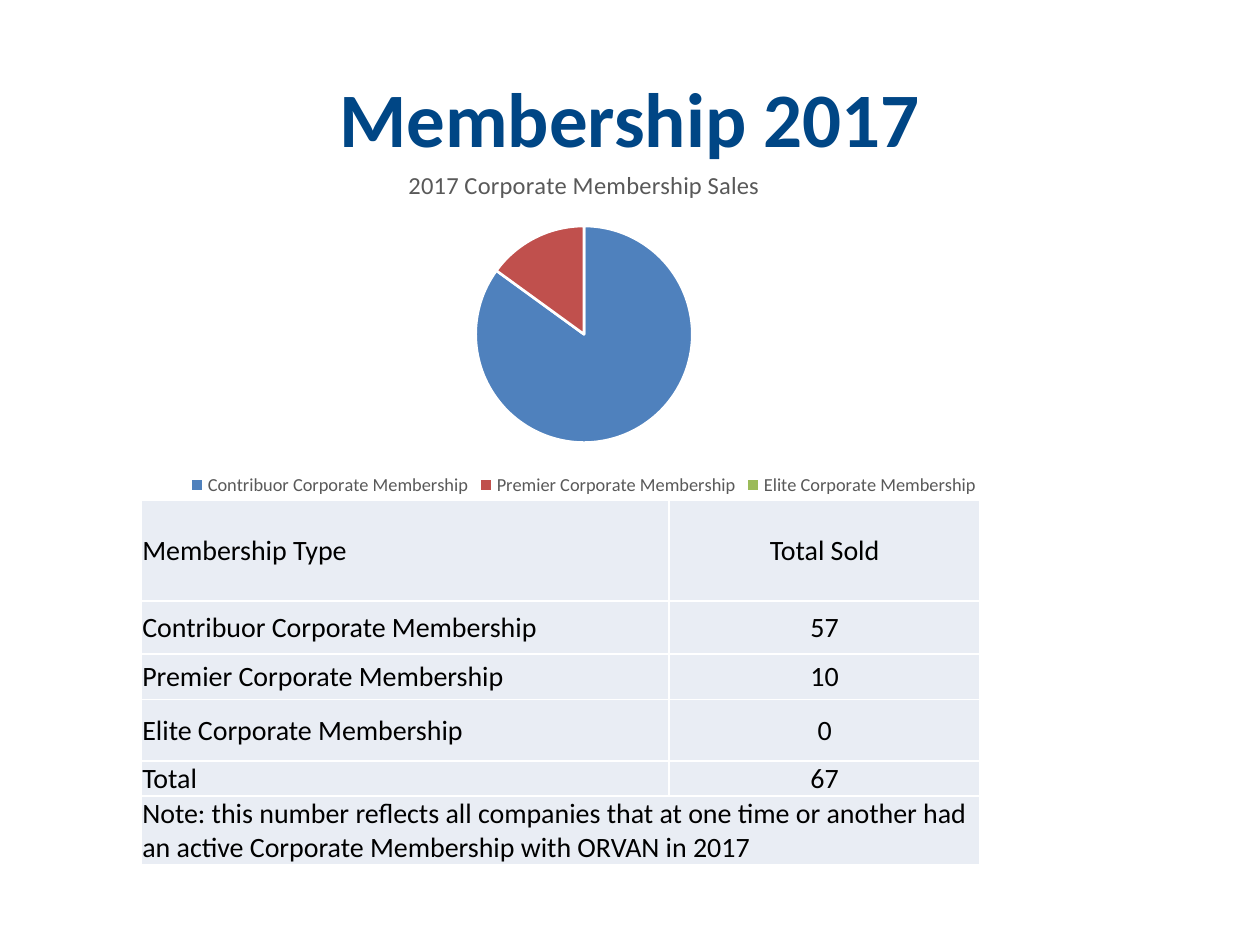
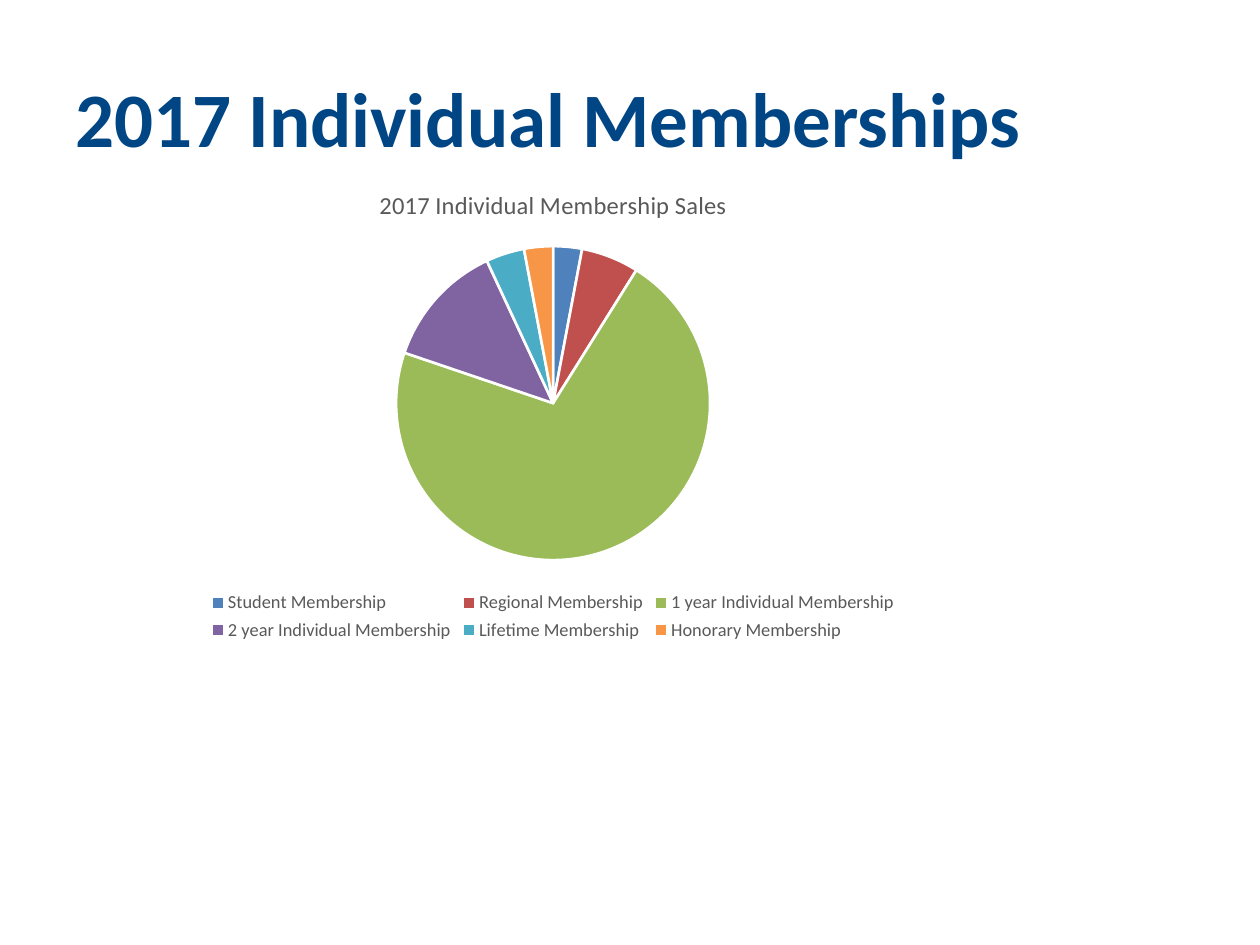
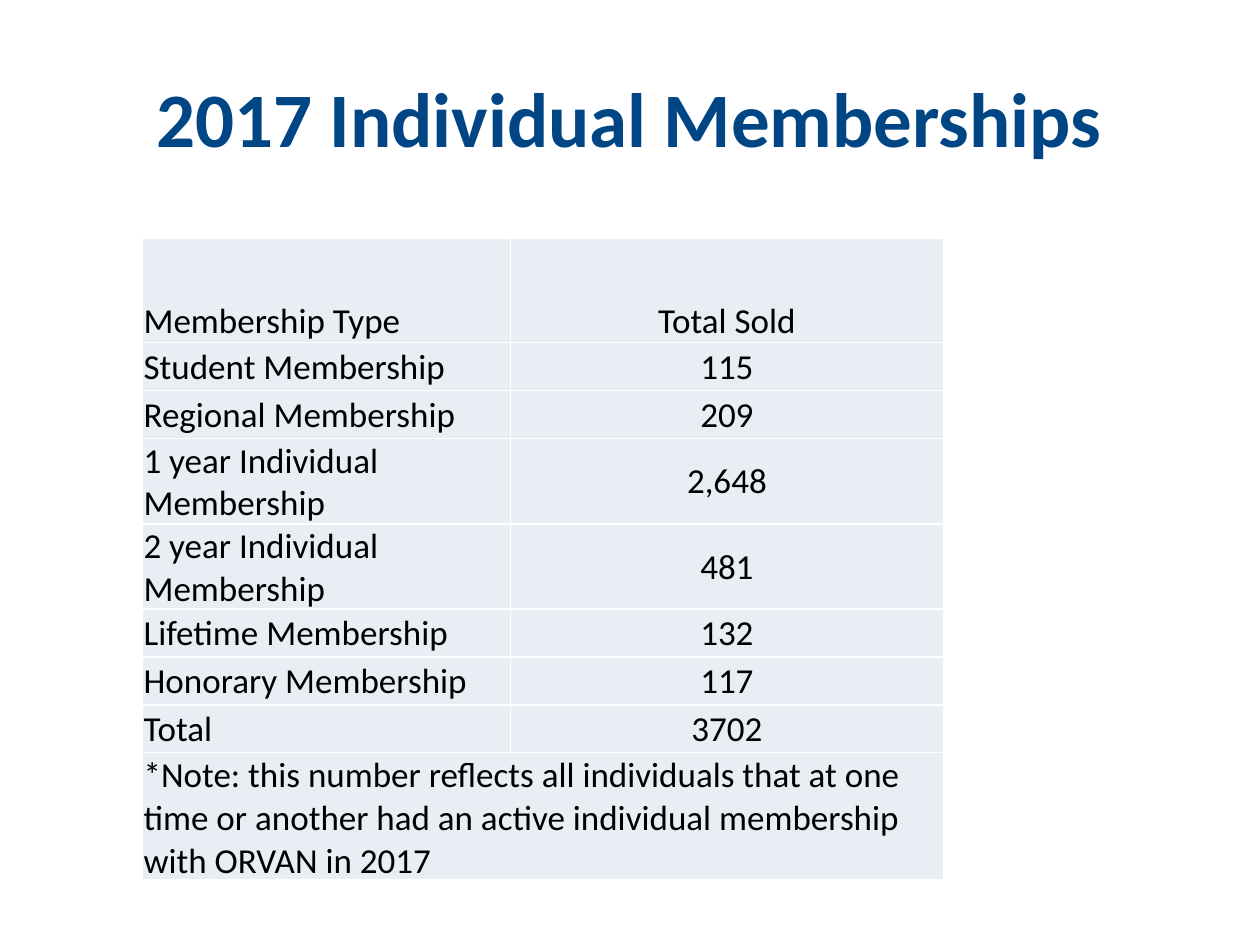
from lxml import etree
from pptx import Presentation
from pptx import util as u
from pptx.chart.data import CategoryChartData
from pptx.dml.color import RGBColor
from pptx.enum import chart as charts, text
from pptx.oxml.ns import qn

NAVY = RGBColor(0x00, 0x46, 0x85)
BLACK = RGBColor(0x00, 0x00, 0x00)
GRAY = RGBColor(0x59, 0x59, 0x59)
WHITE = RGBColor(0xFF, 0xFF, 0xFF)
PALE_BLUE = RGBColor(0xE9, 0xED, 0xF4)
SLICE_COLORS = [RGBColor.from_string(code) for code in
                ("4F81BD", "C0504D", "9BBB59", "8064A2", "4BACC6", "F79646")]
FONT = "Calibri"
WIDTH, HEIGHT = u.Inches(10), u.Inches(7.5)
LEFT, CENTER = text.PP_ALIGN.LEFT, text.PP_ALIGN.CENTER
MIDDLE, BOTTOM = text.MSO_ANCHOR.MIDDLE, text.MSO_ANCHOR.BOTTOM

CORPORATE_SOLD = {
    "Contribuor Corporate Membership": "57",
    "Premier Corporate Membership": "10",
    "Elite Corporate Membership": "0",
}
INDIVIDUAL_SOLD = {
    "Student Membership": "115",
    "Regional Membership": "209",
    "1 year Individual Membership": "2,648",
    "2 year Individual Membership": "481",
    "Lifetime Membership": "132",
    "Honorary Membership": "117",
}

# Boxes are left, top, width, height in inches on the 10 by 7.5 slide.
CORPORATE_PIE = dict(title="2017 Corporate Membership Sales", box=(1.12, 1.19, 7.03, 2.79),
                     names=CORPORATE_SOLD, shares=(85, 15, 0))
INDIVIDUAL_PIE = dict(title="2017 Individual Membership Sales", box=(0.61, 1.33, 7.56, 3.8),
                      names=INDIVIDUAL_SOLD, shares=(3, 6, 72, 13, 4, 3))
CORPORATE_TABLE = dict(
    sold=CORPORATE_SOLD, total="67", corner=(1.12, 3.97), columns=(4.19, 2.47),
    rows=(0.8, 0.42, 0.36, 0.49, 0.27, 0.52), size=16, header_anchor=MIDDLE,
    note="Note: this number reflects all companies that at one time or another had "
         "an active Corporate Membership with ORVAN in 2017")
INDIVIDUAL_TABLE = dict(
    sold=INDIVIDUAL_SOLD, total="3702", corner=(1.13, 1.89), columns=(2.92, 3.44),
    rows=(0.83,) + (0.38,) * 8, size=20, header_anchor=BOTTOM,
    note="*Note: this number reflects all individuals that at one time or another had "
         "an active individual membership with ORVAN in 2017")
SLIDES = [
    ("Membership 2017", CENTER, CORPORATE_PIE, CORPORATE_TABLE),
    ("2017 Individual Memberships", LEFT, INDIVIDUAL_PIE, None),
    ("2017 Individual Memberships", CENTER, None, INDIVIDUAL_TABLE),
]


def write(frame, words, size, color=BLACK, bold=False, align=LEFT):
    paragraph = frame.paragraphs[0]
    paragraph.alignment = align
    run = paragraph.add_run()
    run.text = words
    run.font.name, run.font.size = FONT, u.Pt(size)
    run.font.bold, run.font.color.rgb = bold, color


def fill_and_border(cell):
    """Give a table cell thin white borders and a pale fill."""
    properties = cell._tc.get_or_add_tcPr()
    for side in ("lnL", "lnR", "lnT", "lnB"):
        line = etree.SubElement(properties, qn(f"a:{side}"), w=str(u.Pt(1)))
        solid = etree.SubElement(line, qn("a:solidFill"))
        etree.SubElement(solid, qn("a:srgbClr"), val=str(WHITE))
    cell.fill.solid()
    cell.fill.fore_color.rgb = PALE_BLUE


presentation = Presentation()
presentation.slide_width, presentation.slide_height = WIDTH, HEIGHT

for title, title_align, pie, sales in SLIDES:
    slide = presentation.slides.add_slide(presentation.slide_layouts[6])
    title_box = slide.shapes.add_textbox(
        int(WIDTH * 0.05), int(HEIGHT * 0.04), int(WIDTH * 0.9), u.Inches(1.25))
    title_box.text_frame.word_wrap = True
    title_box.text_frame.vertical_anchor = MIDDLE
    write(title_box.text_frame, title, 44, color=NAVY, bold=True, align=title_align)

    if pie:
        data = CategoryChartData()
        data.categories = list(pie["names"])
        data.add_series("Series 1", pie["shares"])
        chart = slide.shapes.add_chart(
            charts.XL_CHART_TYPE.PIE, *map(u.Inches, pie["box"]), data).chart
        chart.font.name, chart.font.size = FONT, u.Pt(10)
        chart.font.color.rgb = BLACK
        chart.has_title = True
        write(chart.chart_title.text_frame, pie["title"], 14, color=GRAY, align=CENTER)
        chart.chart_title.include_in_layout = False
        chart.has_legend = True
        chart.legend.position = charts.XL_LEGEND_POSITION.BOTTOM
        chart.legend.include_in_layout = False
        chart.legend.font.name, chart.legend.font.size = FONT, u.Pt(10.5)
        chart.legend.font.color.rgb = GRAY
        plot = chart.plots[0]
        plot.vary_by_categories = True
        for index, color in zip(range(len(pie["shares"])), SLICE_COLORS):
            slice_format = plot.series[0].points[index].format
            slice_format.fill.solid()
            slice_format.fill.fore_color.rgb = color
            slice_format.line.color.rgb = WHITE
            slice_format.line.width = u.Pt(1.5)

    if sales:
        rows = [("Membership Type", "Total Sold"), *sales["sold"].items(),
                ("Total", sales["total"]), (sales["note"], "")]
        size = (sum(sales["columns"]), sum(sales["rows"]))
        table = slide.shapes.add_table(
            len(rows), 2, *map(u.Inches, sales["corner"] + size)).table
        table.first_row = table.horz_banding = False
        for column, width in zip(table.columns, sales["columns"]):
            column.width = u.Inches(width)
        for row, height in zip(table.rows, sales["rows"]):
            row.height = u.Inches(height)
        table.cell(len(rows) - 1, 0).merge(table.cell(len(rows) - 1, 1))
        for row_index, row in enumerate(rows):
            for column_index, words in enumerate(row):
                cell = table.cell(row_index, column_index)
                fill_and_border(cell)
                cell.margin_left = cell.margin_right = cell.margin_top = u.Inches(0.01)
                cell.margin_bottom = 0
                cell.vertical_anchor = MIDDLE if row_index else sales["header_anchor"]
                if words:
                    write(cell.text_frame, words, sales["size"],
                          align=CENTER if column_index else LEFT)

presentation.save("out.pptx")
